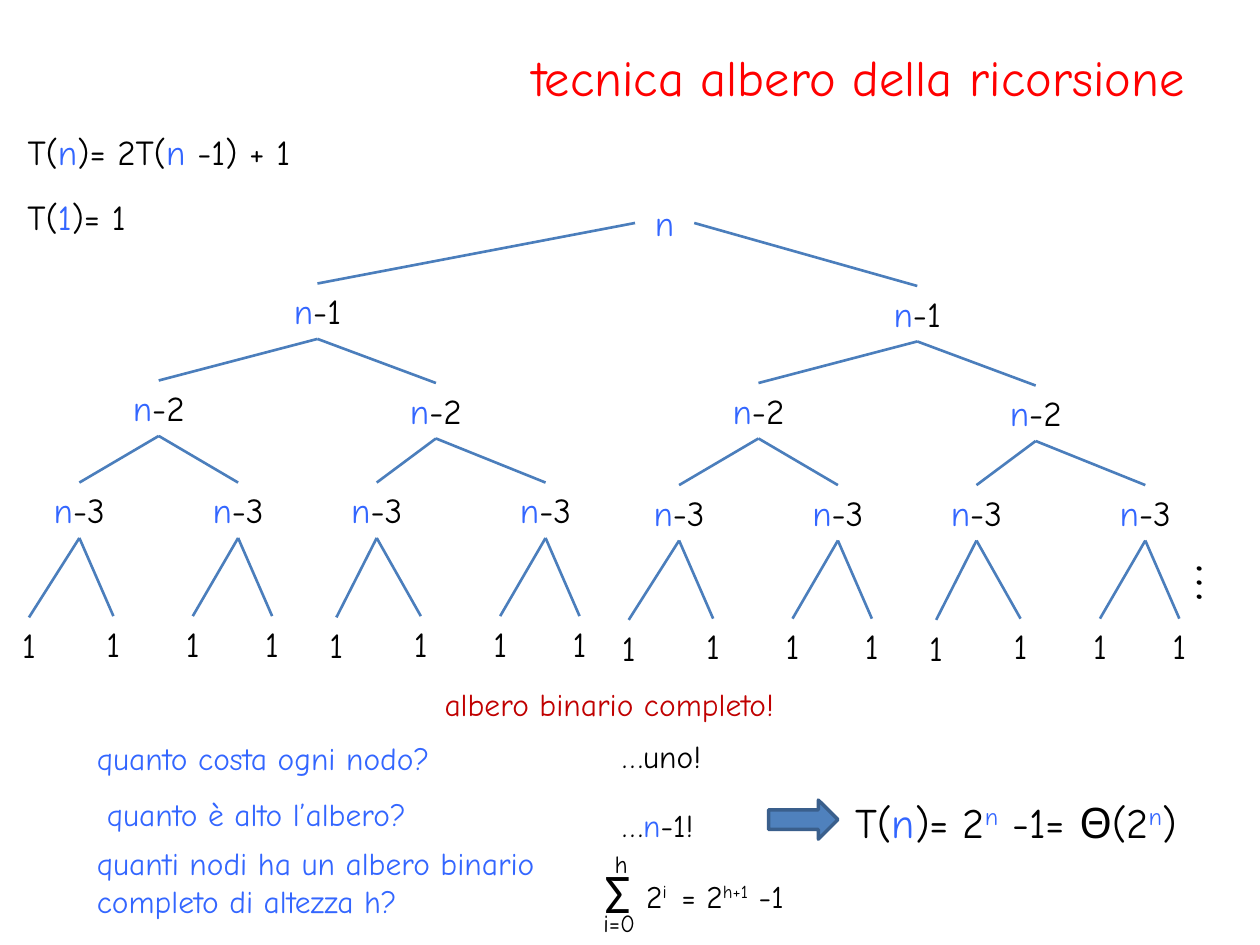
from lxml.etree import SubElement
from pptx import Presentation
from pptx.dml.color import RGBColor
from pptx.enum.shapes import MSO_CONNECTOR, MSO_SHAPE
from pptx.enum.text import MSO_ANCHOR, PP_ALIGN
from pptx.oxml.ns import qn
from pptx.util import Inches, Pt

FONT = "Comic Neue"
BLACK = RGBColor(0x00, 0x00, 0x00)
BLUE = RGBColor(0x33, 0x66, 0xFF)
RED = RGBColor(0xFF, 0x00, 0x00)
DARK_RED = RGBColor(0xC0, 0x00, 0x00)
BRANCH = RGBColor(0x4B, 0x7E, 0xBC)
ARROW_FILL = RGBColor(0x4F, 0x81, 0xBD)
ARROW_LINE = RGBColor(0x3A, 0x5F, 0x8C)

TOP, LEFT, BOTTOM, RIGHT = 0, 1, 2, 3
NODE_HEIGHT = 0.44
RIGHT_SHIFT = (4.76, 0.02)
LEVELS = [
    [(2.52, 2.25)],
    [(1.26, 3.02), (3.46, 3.04)],
    [(0.63, 3.83), (1.89, 3.83), (2.99, 3.83), (4.33, 3.83)],
    [(0.23, 4.9), (0.9, 4.89), (1.53, 4.89), (2.16, 4.89),
     (2.67, 4.9), (3.34, 4.89), (3.97, 4.89), (4.6, 4.89)],
]
LABELS = [
    [("n", BLUE), ("-1", BLACK)],
    [("n", BLUE), ("-2", BLACK)],
    [("n", BLUE), ("-3", BLACK)],
    [("1", BLACK)],
]
TEXTS = [
    ((0.12, 0.99, 3.35, 0.44), 20,
     [("T(", BLACK), ("n", BLUE), (")= 2T(", BLACK), ("n", BLUE), (" -1) + 1", BLACK)]),
    ((0.12, 1.5, 1.26, 0.44), 20, [("T(", BLACK), ("1", BLUE), (")= 1", BLACK)]),
    ((3.43, 5.39, 3.46, 0.4), 18, [("albero binario completo!", DARK_RED)]),
    ((0.67, 5.82, 4.25, 0.4), 18, [("quanto costa ogni nodo?", BLUE)]),
    ((4.84, 5.8, 0.87, 0.4), 18, [("…uno!", BLACK)]),
    ((0.75, 6.26, 3.07, 0.4), 18, [("quanto è alto l’albero?", BLUE)]),
    ((4.84, 6.35, 0.87, 0.4), 18, [("…", BLACK), ("n", BLUE), ("-1!", BLACK)]),
    ((0.67, 6.65, 3.7, 0.71), 18,
     [("quanti nodi ha un albero binario completo di altezza h?", BLUE)]),
    ((6.69, 6.27, 3.11, 0.5), 24,
     [("T(", BLACK), ("n", BLUE), (")= 2", BLACK), ("n", BLUE, True),
      (" -1= Θ(2", BLACK), ("n", BLUE, True), (")", BLACK)]),
    ((5.03, 6.91, 0.47, 0.4), 18, [("2", BLACK), ("i", BLACK, True)]),
    ((5.31, 6.91, 1.34, 0.4), 18,
     [("= 2", BLACK), ("h+1", BLACK, True), (" -1", BLACK)]),
    ((4.69, 7.16, 0.47, 0.34), 14, [("i=0", BLACK)]),
    ((4.78, 6.69, 0.47, 0.34), 14, [("h", BLACK)]),
]


def add_span(para, size, text, color, superscript=False, font=FONT):
    """Append one formatted run to a paragraph."""
    span = para.add_run()
    span.text = text
    span.font.name = font
    span.font.size = Pt(size)
    span.font.color.rgb = color
    if superscript:
        span.font._element.set("baseline", "30000")


def add_text(page, bounds, size, spans, align=PP_ALIGN.LEFT, font=FONT):
    """Add a wrapped text box made of the given runs."""
    box = page.shapes.add_textbox(*map(Inches, bounds))
    box.text_frame.word_wrap = True
    para = box.text_frame.paragraphs[0]
    para.alignment = align
    for span in spans:
        add_span(para, size, *span, font=font)
    return box


def add_node(page, center, top, width, spans):
    """Add a tree node centred on a given abscissa."""
    bounds = (center - width / 2, top, width, NODE_HEIGHT)
    return add_text(page, bounds, 20, spans, PP_ALIGN.CENTER)


def add_branch(page, parent, child, side=BOTTOM):
    """Join a side of the parent to the top of the child."""
    branch = page.shapes.add_connector(MSO_CONNECTOR.STRAIGHT, 0, 0, 0, 0)
    branch.begin_connect(parent, side)
    branch.end_connect(child, TOP)
    branch.line.color.rgb = BRANCH
    branch.line.width = Pt(1.5)
    SubElement(branch._element.spPr, qn("a:effectLst"))


def add_subtree(page, shift_x, shift_y):
    """Draw a complete subtree and return its top node."""
    parents = []
    for level, (places, label) in enumerate(zip(LEVELS, LABELS)):
        width = 0.71 if level == 3 else 1.1
        nodes = [add_node(page, x + shift_x, y + shift_y, width, label) for x, y in places]
        if level == 0:
            top_node = nodes[0]
        else:
            for index, node in enumerate(nodes):
                add_branch(page, parents[index // 2], node)
        parents = nodes
    return top_node


def add_tree(page):
    """Draw the root with its two equal subtrees."""
    root = add_node(page, 5.275, 1.55, 0.47, [("n", BLUE)])
    add_branch(page, root, add_subtree(page, 0, 0), LEFT)
    add_branch(page, root, add_subtree(page, *RIGHT_SHIFT), RIGHT)
    dots = add_text(page, (9.48, 4.26, 0.39, 0.64), 32, [("…", BLACK)])
    dots.rotation = 90


def add_arrow(page):
    """Add the block arrow that leads to the result."""
    arrow = page.shapes.add_shape(
        MSO_SHAPE.RIGHT_ARROW, Inches(6.1), Inches(6.35), Inches(0.55), Inches(0.31))
    arrow.shadow.inherit = False
    arrow.fill.solid()
    arrow.fill.fore_color.rgb = ARROW_FILL
    arrow.line.color.rgb = ARROW_LINE
    arrow.line.width = Pt(2)


def set_title(page):
    """Place and format the title."""
    title = page.shapes.title
    title.left, title.top = Inches(0.5), Inches(0.3)
    title.width, title.height = Inches(9), Inches(0.61)
    title.text_frame.vertical_anchor = MSO_ANCHOR.MIDDLE
    para = title.text_frame.paragraphs[0]
    para.alignment = PP_ALIGN.RIGHT
    add_span(para, 28.8, "tecnica albero della ricorsione", RED)


def main():
    """Build the slide and save it."""
    deck = Presentation()
    deck.slide_width, deck.slide_height = Inches(10), Inches(7.5)
    page = deck.slides.add_slide(deck.slide_layouts[5])
    set_title(page)
    add_tree(page)
    for bounds, size, spans in TEXTS:
        add_text(page, bounds, size, spans)
    sigma = add_text(page, (4.7, 6.76, 0.47, 0.64), 32, [("Σ", BLACK)], font="Calibri")
    sigma.text_frame.word_wrap = False
    add_arrow(page)
    deck.save("out.pptx")


if __name__ == "__main__":
    main()
